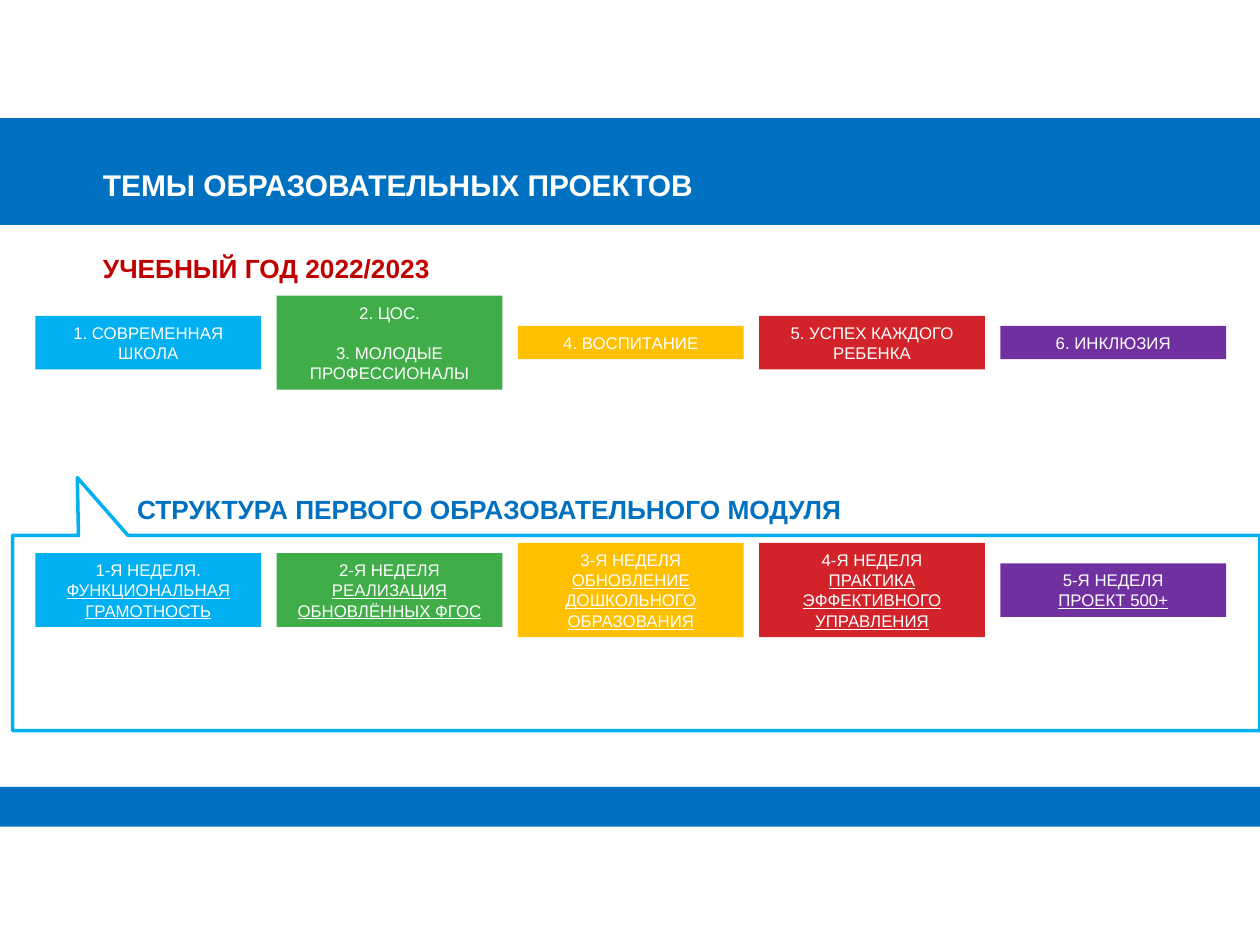
from pptx import Presentation
from pptx.dml.color import RGBColor
from pptx.enum.shapes import MSO_SHAPE
from pptx.enum.text import MSO_ANCHOR, PP_ALIGN
from pptx.util import Pt

HUES = {
    "blue": "0070C0",
    "sky": "00B0F0",
    "green": "40AD49",
    "gold": "FFC000",
    "red": "D2232A",
    "plum": "7030A0",
    "dark": "C00000",
    "white": "FFFFFF",
}


def hue(name):
    return RGBColor.from_string(HUES[name])


def write(frame, text, size=9.6, color="white", bold=False,
          align=PP_ALIGN.LEFT, gap=0, under=False, font="Arial"):
    frame.word_wrap = True
    for i, line in enumerate(text.split("\n")):
        par = frame.paragraphs[0] if i == 0 else frame.add_paragraph()
        par.alignment = align
        if i and gap:
            par.space_before = Pt(gap)
        run = par.add_run()
        run.text = line
        run.font.name = font
        run.font.size = Pt(size)
        run.font.bold = bold
        run.font.color.rgb = hue(color)
        if i and under:
            run.font.underline = True


class Deck:
    def __init__(self, wide, high):
        self.show = Presentation()
        self.show.slide_width = Pt(wide)
        self.show.slide_height = Pt(high)
        self.slide = self.show.slides.add_slide(self.show.slide_layouts[6])
        self.shapes = self.slide.shapes

    def block(self, x, y, wide, high, color):
        shape = self.shapes.add_shape(
            MSO_SHAPE.RECTANGLE, Pt(x), Pt(y), Pt(wide), Pt(high))
        shape.shadow.inherit = False
        shape.fill.solid()
        shape.fill.fore_color.rgb = hue(color)
        shape.line.fill.background()
        return shape

    def title(self, x, y, high, text, **form):
        box = self.shapes.add_textbox(Pt(x), Pt(y), Pt(462), Pt(high))
        write(box.text_frame, text, bold=True, **form)

    def row(self, mid, cards, **form):
        for i, (text, rows, color) in enumerate(cards):
            high = 7.4 + 11.6 * rows
            card = self.block(20.2 + 137.85 * i, mid - high / 2, 129, high, color)
            card.text_frame.vertical_anchor = MSO_ANCHOR.MIDDLE
            write(card.text_frame, text, align=PP_ALIGN.CENTER, **form)

    def outline(self, points, color, width):
        pen = self.shapes.build_freeform(
            Pt(points[0][0]), Pt(points[0][1]), scale=1.0)
        pen.add_line_segments([(Pt(x), Pt(y)) for x, y in points[1:]], close=True)
        shape = pen.convert_to_shape()
        shape.shadow.inherit = False
        shape.fill.background()
        shape.line.color.rgb = hue(color)
        shape.line.width = Pt(width)


def main():
    deck = Deck(720, 540)
    deck.block(0, 67.5, 720, 61, "blue")
    deck.block(0, 449.7, 720, 22.8, "blue")
    deck.title(51.8, 91.5, 28, "ТЕМЫ ОБРАЗОВАТЕЛЬНЫХ ПРОЕКТОВ", size=17.1)
    deck.title(51.8, 140.4, 25.2, "УЧЕБНЫЙ ГОД 2022/2023", size=15, color="dark")
    deck.row(195.8, [
        ("1. СОВРЕМЕННАЯ ШКОЛА", 2, "sky"),
        ("2. ЦОС.\n3. МОЛОДЫЕ ПРОФЕССИОНАЛЫ", 4, "green"),
        ("4. ВОСПИТАНИЕ", 1, "gold"),
        ("5. УСПЕХ КАЖДОГО РЕБЕНКА", 2, "red"),
        ("6. ИНКЛЮЗИЯ", 1, "plum"),
    ], gap=11.5)
    deck.row(337.2, [
        ("1-Я НЕДЕЛЯ.\nФУНКЦИОНАЛЬНАЯ ГРАМОТНОСТЬ", 3, "sky"),
        ("2-Я НЕДЕЛЯ\nРЕАЛИЗАЦИЯ ОБНОВЛЁННЫХ ФГОС", 3, "green"),
        ("3-Я НЕДЕЛЯ\nОБНОВЛЕНИЕ ДОШКОЛЬНОГО ОБРАЗОВАНИЯ", 4, "gold"),
        ("4-Я НЕДЕЛЯ\nПРАКТИКА ЭФФЕКТИВНОГО УПРАВЛЕНИЯ", 4, "red"),
        ("5-Я НЕДЕЛЯ\nПРОЕКТ 500+", 2, "plum"),
    ], under=True)
    deck.title(71.3, 278.6, 25.2, "СТРУКТУРА ПЕРВОГО ОБРАЗОВАТЕЛЬНОГО МОДУЛЯ",
               size=15, color="blue")
    deck.outline([
        (7.2, 306), (44.9, 306), (44.2, 272.9), (73.2, 306),
        (720, 306), (720, 417.5), (7.2, 417.5),
    ], "sky", 2)
    deck.show.save("out.pptx")


if __name__ == "__main__":
    main()
